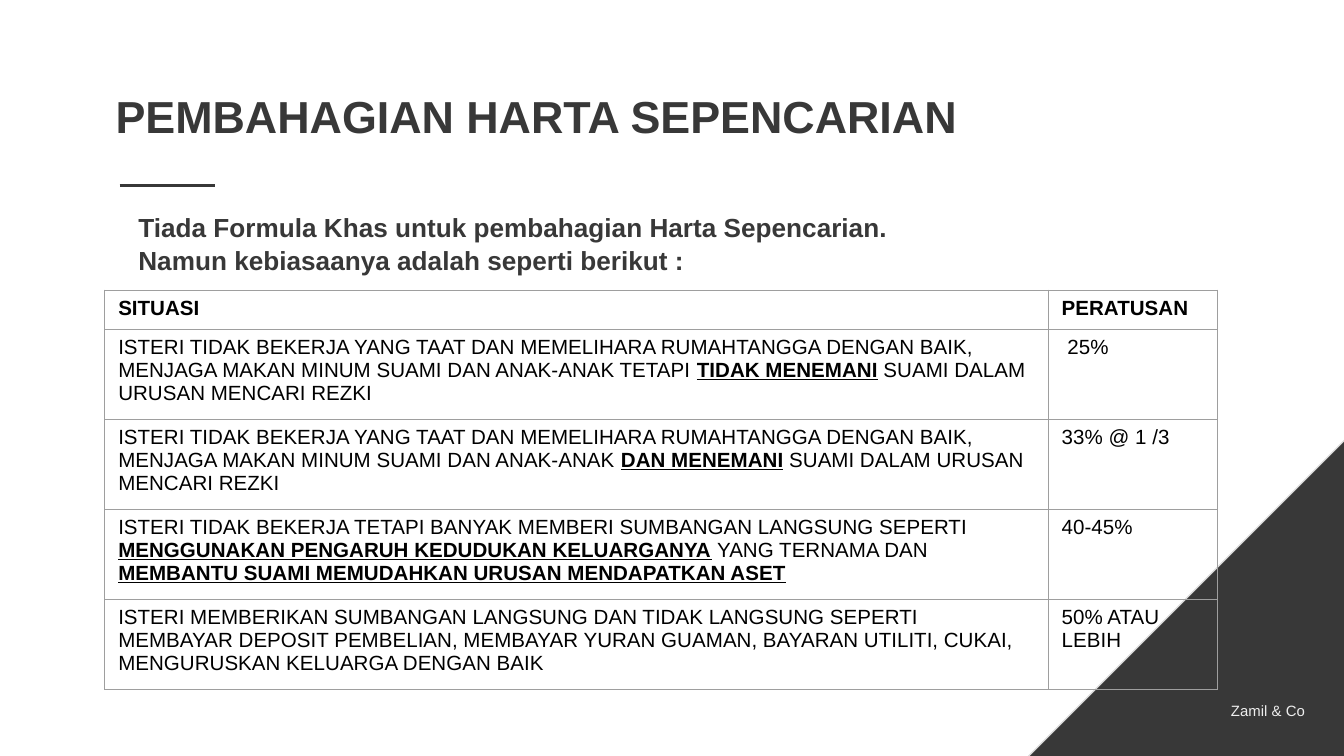
from lxml import etree
from pptx import Presentation
from pptx.dml.color import RGBColor
from pptx.enum.shapes import MSO_CONNECTOR, MSO_SHAPE
from pptx.enum.text import MSO_ANCHOR, PP_ALIGN
from pptx.oxml.ns import qn
from pptx.util import Inches, Pt

TRIANGLE = MSO_SHAPE.RIGHT_TRIANGLE
STRAIGHT = MSO_CONNECTOR.STRAIGHT
LEFT = PP_ALIGN.LEFT
TOP, MIDDLE = MSO_ANCHOR.TOP, MSO_ANCHOR.MIDDLE

COLORS = {"dark": "383838", "edge": "DBDBDB", "border": "9E9E9E",
          "black": "000000", "pale": "EEEEEE"}
FONT = "Arial"


def rgb(name):
    return RGBColor.from_string(COLORS[name])


def add_span(para, text, size, color, bold=False, underline=False):
    span = para.add_run()
    span.text = text
    span.font.name = FONT
    span.font.size = Pt(size)
    span.font.color.rgb = rgb(color)
    span.font.bold = bold
    span.font.underline = underline


deck = Presentation()
deck.slide_width = Inches(10)
deck.slide_height = deck.slide_width * 9 // 16
page = deck.slides.add_slide(deck.slide_layouts[5])

# Dark corner, running past the slide's right and bottom edges
corner = page.shapes.add_shape(TRIANGLE, Inches(6.35), Inches(1.68), Inches(5.25), Inches(5.25))
corner.shadow.inherit = False
corner.fill.solid()
corner.fill.fore_color.rgb = rgb("dark")
corner.line.color.rgb = rgb("edge")
corner.line.width = Pt(0.75)
corner._element.spPr.xfrm.set("flipH", "1")

# Title and its rule
title = page.shapes.title
title.left, title.top, title.width, title.height = (
    Inches(0.76), Inches(0.57), Inches(8.77), Inches(0.58))
title.text_frame.vertical_anchor = MIDDLE
title.text_frame.paragraphs[0].alignment = LEFT
add_span(title.text_frame.paragraphs[0], "PEMBAHAGIAN HARTA SEPENCARIAN", 24, "dark", bold=True)

rule = page.shapes.add_connector(STRAIGHT, Inches(0.89), Inches(1.38), Inches(1.6), Inches(1.38))
rule.line.color.rgb = rgb("dark")
rule.line.width = Pt(1.5)
etree.SubElement(rule._element.spPr, qn("a:effectLst"))

# Introduction
intro = page.shapes.add_textbox(Inches(0.78), Inches(1.47), Inches(6.64), Inches(3.56))
frame = intro.text_frame
frame.word_wrap = True
frame.vertical_anchor = TOP
frame.margin_left = Inches(0.25)
frame.margin_right = Inches(0.2)
frame.margin_top = Inches(0.09)
para = frame.paragraphs[0]
para.line_spacing = 1.05
add_span(para, "Tiada Formula Khas untuk pembahagian Harta Sepencarian. "
               "Namun kebiasaanya adalah seperti berikut :", 14, "dark", bold=True)

# Table: each situation alternates plain and emphasised parts
NOT_WORKING = ("ISTERI TIDAK BEKERJA YANG TAAT DAN MEMELIHARA RUMAHTANGGA DENGAN BAIK, "
               "MENJAGA MAKAN MINUM SUAMI DAN ANAK-ANAK ")
ROWS = [
    (["SITUASI"], "PERATUSAN"),
    ([NOT_WORKING + "TETAPI ", "TIDAK MENEMANI", " SUAMI DALAM URUSAN MENCARI REZKI"], " 25%"),
    ([NOT_WORKING, "DAN MENEMANI", " SUAMI DALAM URUSAN MENCARI REZKI"], "33% @ 1 /3"),
    (["ISTERI TIDAK BEKERJA TETAPI BANYAK MEMBERI SUMBANGAN LANGSUNG SEPERTI ",
      "MENGGUNAKAN PENGARUH KEDUDUKAN KELUARGANYA", " YANG TERNAMA DAN ",
      "MEMBANTU SUAMI MEMUDAHKAN URUSAN MENDAPATKAN ASET"], "40-45%"),
    (["ISTERI MEMBERIKAN SUMBANGAN LANGSUNG DAN TIDAK LANGSUNG SEPERTI MEMBAYAR DEPOSIT "
      "PEMBELIAN, MEMBAYAR YURAN GUAMAN, BAYARAN UTILITI, CUKAI, MENGURUSKAN KELUARGA "
      "DENGAN BAIK"], "50% ATAU LEBIH"),
]
table = page.shapes.add_table(len(ROWS), 2, Inches(0.78), Inches(2.16),
                              Inches(8.28), Inches(2.95)).table
table.horz_banding = False
table.columns[0].width, table.columns[1].width = Inches(7.02), Inches(1.26)
for row_index, (situation, share) in enumerate(ROWS):
    header = row_index == 0
    table.rows[row_index].height = Inches(0.29 if header else 0.67)
    for column, parts in enumerate((situation, [share])):
        cell = table.cell(row_index, column)
        para = cell.text_frame.paragraphs[0]
        for index, text in enumerate(parts):
            strong = index % 2 == 1
            add_span(para, text, 11, "black", bold=header or strong, underline=strong)
        properties = cell._tc.get_or_add_tcPr()
        for side in ("a:lnL", "a:lnR", "a:lnT", "a:lnB"):
            border = etree.SubElement(properties, qn(side), w=str(Pt(0.75)))
            fill = etree.SubElement(border, qn("a:solidFill"))
            etree.SubElement(fill, qn("a:srgbClr"), val=COLORS["border"])
        cell.fill.background()

# Firm name
firm = page.shapes.add_textbox(Inches(9.06), Inches(5.17), Inches(0.89), Inches(0.24))
firm.text_frame.word_wrap = True
add_span(firm.text_frame.paragraphs[0], "Zamil & Co", 8, "pale")

deck.save("out.pptx")
